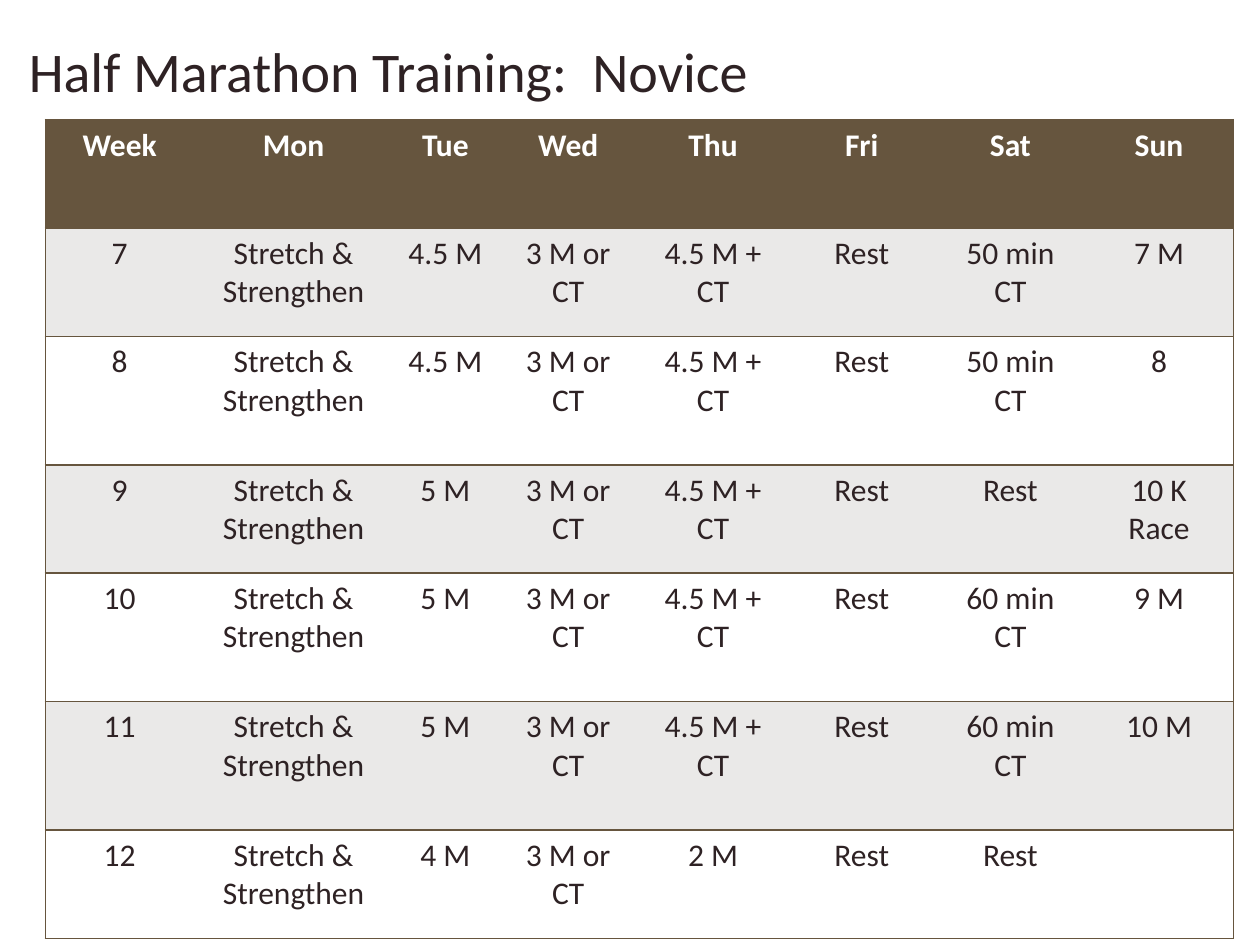
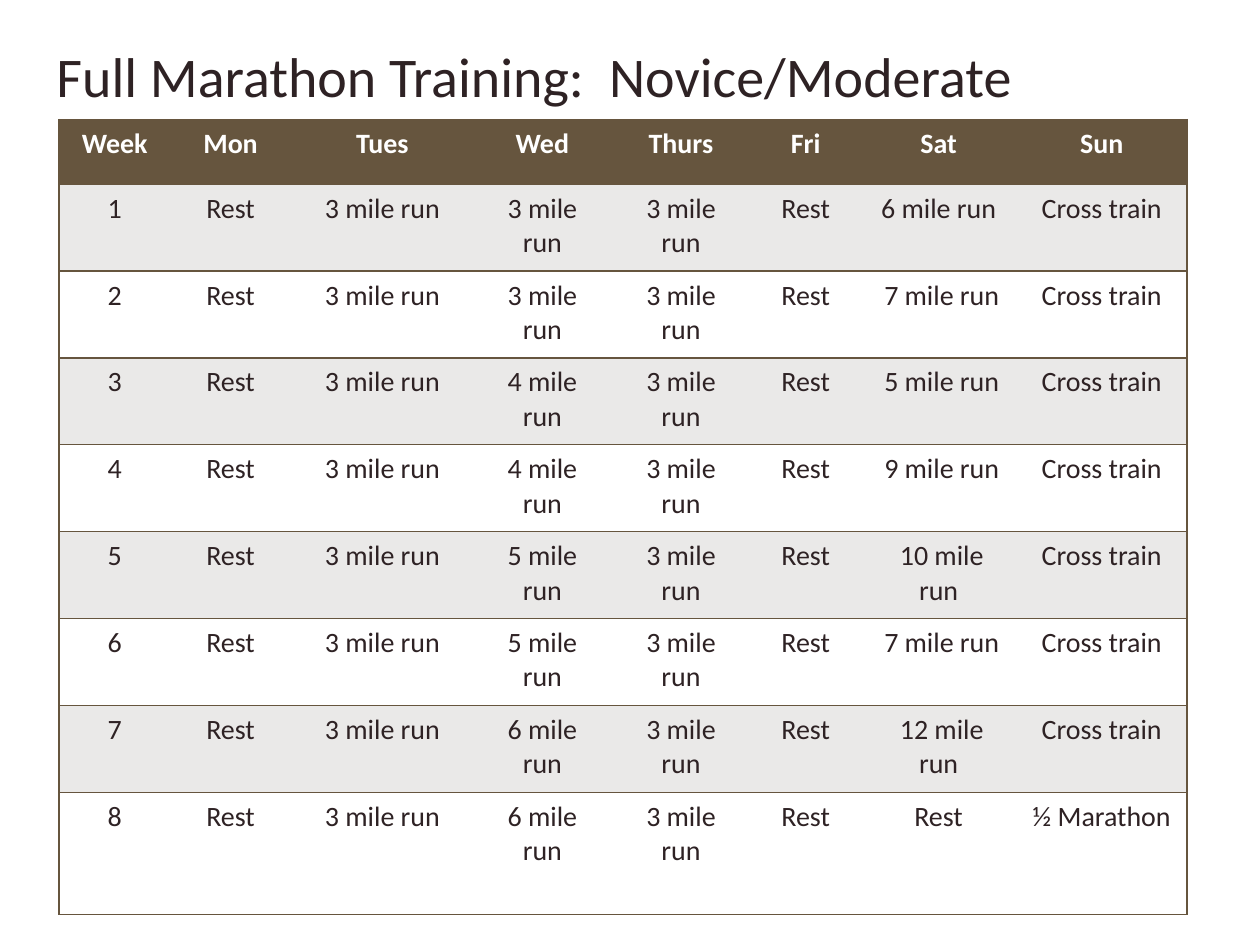
"""Build two marathon training schedules, each a title above a banded weekly table."""
from lxml import etree
from pptx import Presentation, util as u
from pptx.dml.color import RGBColor
from pptx.enum import text
from pptx.oxml.ns import qn

BROWN = RGBColor(0x66, 0x55, 0x3E)
BAND = RGBColor(0xEA, 0xE9, 0xE8)
WHITE = RGBColor(0xFF, 0xFF, 0xFF)
INK = RGBColor(0x2E, 0x22, 0x24)
FONT = "Calibri"
NO_STYLE = "{2D5ABB26-0587-4C30-8999-92F81FD0307C}"
TABLE_TOP = 0.95


def add_run(p, words, size, color, bold=False):
    r = p.add_run()
    r.text = words
    r.font.name, r.font.size, r.font.bold = FONT, u.Pt(size), bold
    r.font.color.rgb = color


def add_borders(cell, sides):
    tcPr = cell._tc.get_or_add_tcPr()
    for i, side in enumerate(sides):
        ln = etree.Element(qn("a:ln" + side), w=str(u.Pt(1)))
        fill = etree.SubElement(ln, qn("a:solidFill"))
        etree.SubElement(fill, qn("a:srgbClr"), val=str(BROWN))
        tcPr.insert(i, ln)


half_weeks = [
    ("7", "4.5 M", "4.5 M + CT", "50 min CT", "7 M"),
    ("8", "4.5 M", "4.5 M + CT", "50 min CT", "8"),
    ("9", "5 M", "4.5 M + CT", "Rest", "10 K Race"),
    ("10", "5 M", "4.5 M + CT", "60 min CT", "9 M"),
    ("11", "5 M", "4.5 M + CT", "60 min CT", "10 M"),
    ("12", "4 M", "2 M", "Rest", ""),
]
full_weeks = [
    ("1", 3, "6 mile run", "Cross train"),
    ("2", 3, " 7 mile run", "Cross train"),
    ("3", 4, " 5 mile run", "Cross train"),
    ("4", 4, " 9 mile run", "Cross train"),
    ("5", 5, " 10 mile run", "Cross train"),
    ("6", 5, " 7 mile run", "Cross train"),
    ("7", 6, " 12 mile run", "Cross train"),
    ("8", 6, "Rest", "½ Marathon"),
]
schedules = [
    dict(
        title="Half Marathon Training:  Novice", title_at=(0.13, 0.24, 6.51, 0.64),
        left=0.36, size=18, margins=(0.1, 0.05),
        cols=[1.18, 1.58, 0.83, 1.12] + [1.18] * 4,
        heights=[0.86, 0.86, 1.02, 0.86, 1.02, 1.02, 0.86],
        rows=[("Week", "Mon", "Tue", "Wed", "Thu", "Fri", "Sat", "Sun")]
        + [(week, "Stretch & Strengthen", tue, "3 M or CT", thu, "Rest", sat, sun)
           for week, tue, thu, sat, sun in half_weeks],
    ),
    dict(
        title="Full Marathon Training:  Novice/Moderate", title_at=(0.35, 0.28, 8.77, 0.64),
        left=0.47, size=16, margins=(0.11, 0.06),
        cols=[0.88, 0.96, 1.45, 1.09, 1.11, 0.87, 1.24, 1.35],
        heights=[0.51] + [0.69] * 7 + [0.97],
        rows=[("Week", "Mon", "Tues", "Wed", "Thurs", "Fri", "Sat", "Sun")]
        + [(week, "Rest", "3 mile run", f"{wed} mile run", "3 mile run", "Rest", sat, sun)
           for week, wed, sat, sun in full_weeks],
    ),
]

prs = Presentation()
prs.slide_width, prs.slide_height = u.Inches(10), u.Inches(7.5)

for plan in schedules:
    s = prs.slides.add_slide(prs.slide_layouts[6])
    rows, cols, heights = plan["rows"], plan["cols"], plan["heights"]
    frame = [plan["left"], TABLE_TOP, sum(cols), sum(heights)]
    tbl = s.shapes.add_table(len(rows), len(cols), *map(u.Inches, frame)).table
    tbl._tbl.tblPr.find(qn("a:tableStyleId")).text = NO_STYLE
    for col, width in zip(tbl.columns, cols):
        col.width = u.Inches(width)
    for row, height in zip(tbl.rows, heights):
        row.height = u.Inches(height)

    side, edge = map(u.Inches, plan["margins"])
    for i, row in enumerate(rows):
        header = i == 0
        for j, words in enumerate(row):
            cell = tbl.cell(i, j)
            cell.margin_left = cell.margin_right = side
            cell.margin_top = cell.margin_bottom = edge
            cell.fill.solid()
            cell.fill.fore_color.rgb = BROWN if header else BAND if i % 2 else WHITE
            add_borders(cell, "L" * (j == 0) + "R" * (j == len(row) - 1) + "TB")
            p = cell.text_frame.paragraphs[0]
            p.alignment = text.PP_ALIGN.CENTER
            if words:
                add_run(p, words, plan["size"], WHITE if header else INK, header)

    sp = s.shapes.add_textbox(*map(u.Inches, plan["title_at"]))
    tf = sp.text_frame
    tf.word_wrap = True
    tf.auto_size = text.MSO_AUTO_SIZE.SHAPE_TO_FIT_TEXT
    add_run(tf.paragraphs[0], plan["title"], 32, INK)

prs.save("out.pptx")
